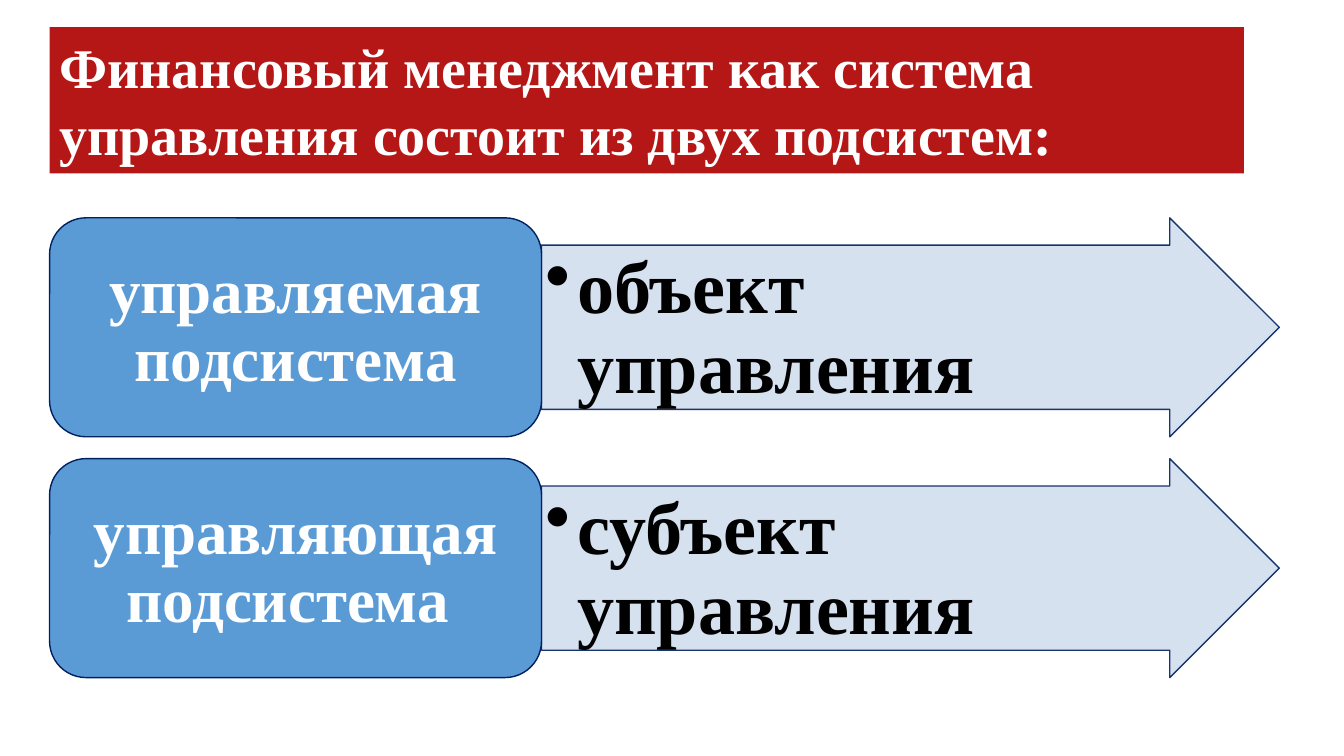
"""Build a slide showing the two subsystems of financial management."""
from dataclasses import dataclass

from lxml import etree
from pptx import Presentation
from pptx.dml.color import RGBColor
from pptx.enum import shapes, text
from pptx.oxml import ns
from pptx.util import Pt

FONT = "Times New Roman"
LEFT = 35.4
ROWS_TOP = 155.6
ROW_PITCH = 172
ROW_HEIGHT = 156.4
BOX_WIDTH = 351.4
ARROW_WIDTH = 527
HANGING_INDENT = 22.5


@dataclass
class Subsystem:
    name: str
    role: str


SUBSYSTEMS = [
    Subsystem("управляемая подсистема", "объект управления"),
    Subsystem("управляющая подсистема ", "субъект управления"),
]


def color(value: str) -> RGBColor:
    return RGBColor.from_string(value)


def add_block(slide, kind, left: float, top: float, width: float, height: float,
              fill: str, line: str | None = None):
    shape = slide.shapes.add_shape(kind, Pt(left), Pt(top), Pt(width), Pt(height))
    shape.shadow.inherit = False
    shape.fill.solid()
    shape.fill.fore_color.rgb = color(fill)
    if line:
        shape.line.color.rgb = color(line)
        shape.line.width = Pt(1)
    else:
        shape.line.fill.background()
    return shape


def make_translucent(shape, percent: int) -> None:
    for element in shape.element.spPr.iter(ns.qn("a:srgbClr")):
        etree.SubElement(element, ns.qn("a:alpha"), val=str(percent * 1000))


def add_bullet(paragraph, indent: float) -> None:
    properties = paragraph._p.get_or_add_pPr()
    properties.set("marL", str(Pt(indent)))
    properties.set("indent", str(-Pt(indent)))
    etree.SubElement(properties, ns.qn("a:buChar"), char="•")


def write_text(shape, content: str, *, size: float, font_color: str,
               align=text.PP_ALIGN.LEFT, anchor=text.MSO_ANCHOR.TOP,
               insets: tuple = (7.2, 3.6, 7.2, 3.6),
               line_spacing: float | None = None, bullet: bool = False) -> None:
    frame = shape.text_frame
    frame.word_wrap = True
    frame.vertical_anchor = anchor
    (frame.margin_left, frame.margin_top,
     frame.margin_right, frame.margin_bottom) = map(Pt, insets)
    paragraph = frame.paragraphs[0]
    paragraph.alignment = align
    if line_spacing:
        paragraph.line_spacing = line_spacing
    if bullet:
        add_bullet(paragraph, HANGING_INDENT)
    run = paragraph.add_run()
    run.text = content
    run.font.name = FONT
    run.font.size = Pt(size)
    run.font.bold = True
    run.font.color.rgb = color(font_color)


def add_subsystem(slide, subsystem: Subsystem, top: float) -> None:
    arrow = add_block(slide, shapes.MSO_SHAPE.RIGHT_ARROW, LEFT + BOX_WIDTH, top,
                      ARROW_WIDTH, ROW_HEIGHT, "D2DEEF", "002060")
    arrow.adjustments[0] = 0.75
    arrow.adjustments[1] = 0.5
    make_translucent(arrow, 90)
    write_text(arrow, subsystem.role, size=53, font_color="000000",
               insets=(2.9, 2.9, 42, 2.9), line_spacing=0.9, bullet=True)

    box = add_block(slide, shapes.MSO_SHAPE.ROUNDED_RECTANGLE, LEFT, top,
                    BOX_WIDTH, ROW_HEIGHT, "5B9BD5", "002060")
    write_text(box, subsystem.name, size=45, font_color="FFFFFF",
               align=text.PP_ALIGN.CENTER, anchor=text.MSO_ANCHOR.MIDDLE,
               insets=(13.5, 6.75, 13.5, 6.75), line_spacing=0.9)


def main() -> None:
    presentation = Presentation()
    presentation.slide_width = Pt(960)
    presentation.slide_height = Pt(540)
    slide = presentation.slides.add_slide(presentation.slide_layouts[6])

    title = add_block(slide, shapes.MSO_SHAPE.RECTANGLE, LEFT, 19.4, 853.2, 104.4, "B51717")
    write_text(title, "Финансовый менеджмент как система управления состоит из двух подсистем: ",
               size=40, font_color="FFFFFF")
    for index, subsystem in enumerate(SUBSYSTEMS):
        add_subsystem(slide, subsystem, ROWS_TOP + index * ROW_PITCH)

    presentation.save("out.pptx")


if __name__ == "__main__":
    main()
